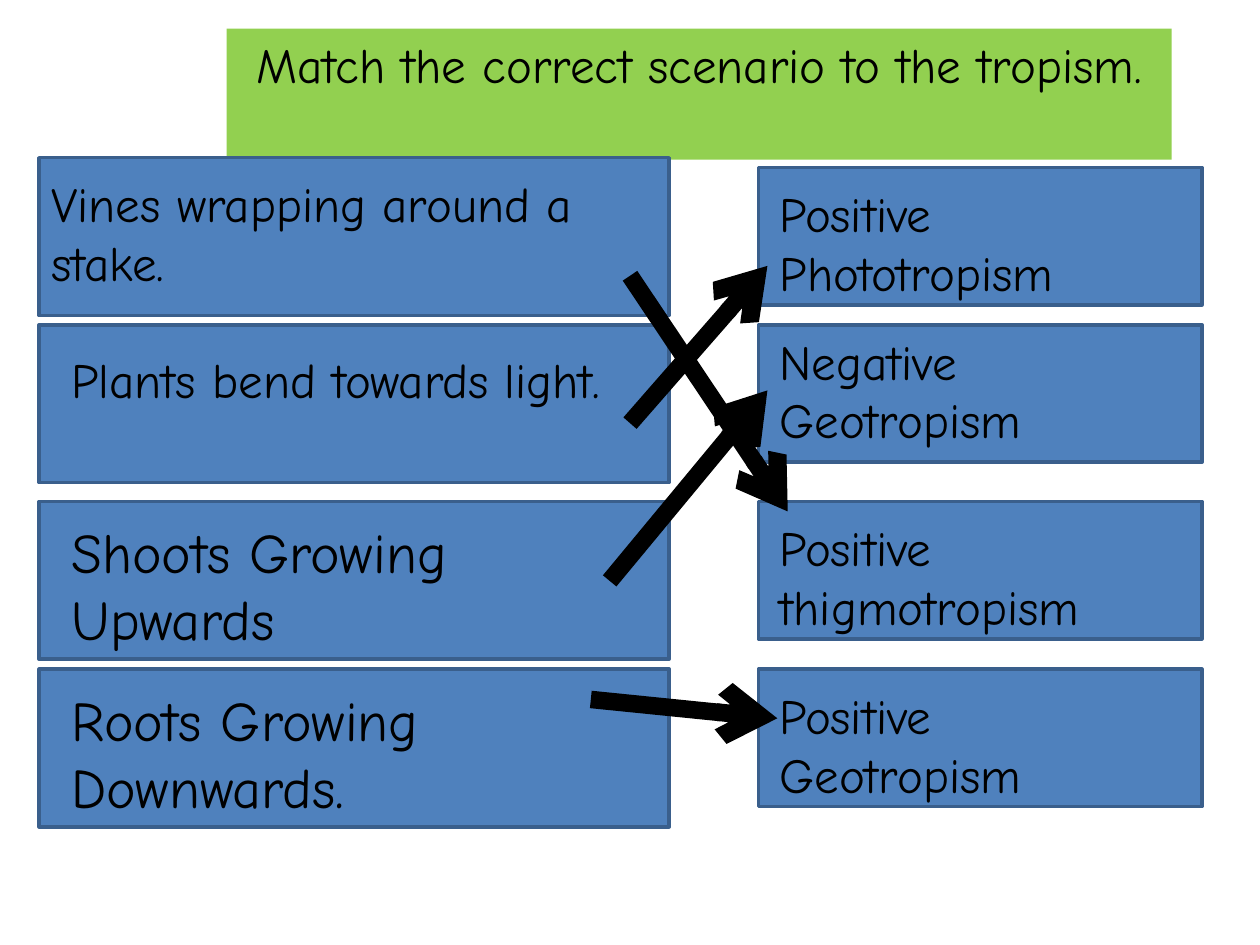
from lxml.etree import SubElement as Sub
from pptx import Presentation as Deck
from pptx.dml.color import RGBColor as Rgb
from pptx.enum.shapes import MSO_CONNECTOR as Link, MSO_SHAPE as Form
from pptx.enum.text import MSO_ANCHOR as Anchor, PP_ALIGN as Align
from pptx.oxml.ns import qn
from pptx.util import Cm, Pt

hues = {"title": "92D050", "box": "4F81BD", "edge": "3A5F8C", "ink": "000000"}
font = {"name": "Comic Neue", "bold": False}
frame = {"word_wrap": True, "vertical_anchor": Anchor.TOP}


def block(x, y, w, h, fill, edge=None):
    rect = slide.shapes.add_shape(Form.RECTANGLE, Cm(x), Cm(y), Cm(w), Cm(h))
    rect.shadow.inherit = False
    rect.fill.solid()
    rect.fill.fore_color.rgb = Rgb.from_string(hues[fill])
    if edge:
        rect.line.color.rgb = Rgb.from_string(hues[edge])
        rect.line.width = Pt(2)
    else:
        rect.line.fill.background()
    return rect


def write(shape, text, size, align=Align.LEFT):
    body = shape.text_frame
    for key, value in frame.items():
        setattr(body, key, value)
    para = body.paragraphs[0]
    para.alignment = align
    run = para.add_run()
    run.text = text
    for key, value in {**font, "size": Pt(size)}.items():
        setattr(run.font, key, value)
    run.font.color.rgb = Rgb.from_string(hues["ink"])


deck = Deck()
deck.slide_width, deck.slide_height = Cm(25.4), Cm(19.05)
slide = deck.slides.add_slide(deck.slide_layouts[6])

title = block(4.57, 0.58, 19.05, 2.64, "title")
write(title, "Match the correct scenario to the tropism.", 28, Align.CENTER)

columns = [
    (0.79, 12.7, 3.18, [
        (3.18, "Vines wrapping around a stake.", 28, 0.79, 3.38, 12.9),
        (6.55, "Plants bend towards light.", 28, 1.19, 6.93, 12.12),
        (10.11, "Shoots Growing Upwards", 32, 1.19, 10.31, 12.12),
        (13.49, "Roots Growing Downwards.", 32, 1.19, 13.69, 12.12),
    ]),
    (15.29, 8.94, 2.77, [
        (3.38, "Positive Phototropism", 28, 15.47, 3.58, 8.53),
        (6.55, "Negative Geotropism", 28, 15.47, 6.55, 8.53),
        (10.11, "Positive thigmotropism", 28, 15.47, 10.31, 8.53),
        (13.49, "Positive Geotropism", 28, 15.47, 13.69, 8.53),
    ]),
]
for left, width, height, rows in columns:
    for top, text, size, x, y, w in rows:
        block(left, top, width, height, "box", "edge")
        label = slide.shapes.add_textbox(Cm(x), Cm(y), Cm(w), Cm(2.64))
        write(label, text, size)

matches = [
    (12.7, 5.56, 15.88, 10.31),
    (12.7, 8.53, 15.47, 5.36),
    (12.29, 11.71, 15.47, 7.87),
    (11.91, 14.1, 15.67, 14.48),
]
for ends in matches:
    arrow = slide.shapes.add_connector(Link.STRAIGHT, *map(Cm, ends))
    arrow.line.color.rgb = Rgb.from_string(hues["ink"])
    arrow.line.width = Pt(10)
    Sub(arrow.line._get_or_add_ln(), qn("a:tailEnd"), type="arrow")
    Sub(arrow._element.spPr, qn("a:effectLst"))

deck.save("out.pptx")
